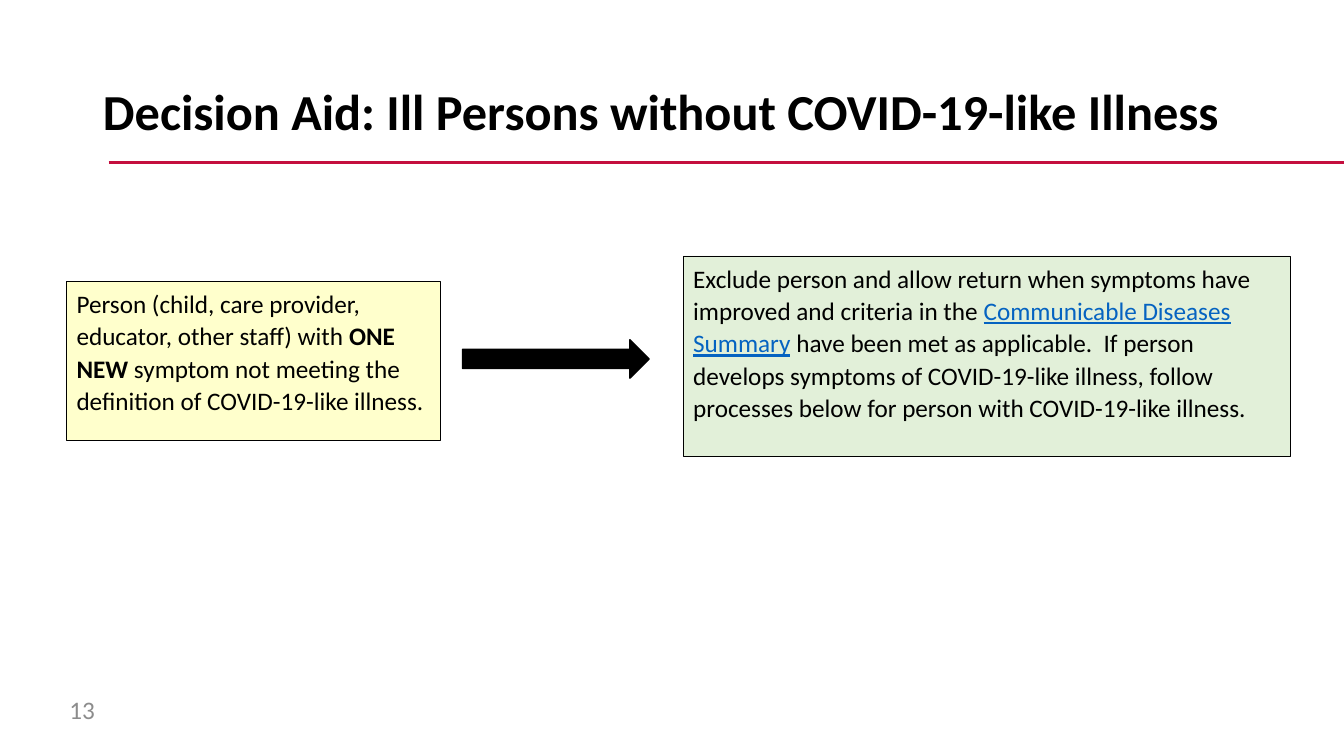
from pptx import Presentation
from pptx.dml.color import RGBColor
from pptx.enum.shapes import MSO_CONNECTOR, MSO_SHAPE
from pptx.enum.text import MSO_ANCHOR, MSO_AUTO_SIZE, PP_ALIGN
from pptx.oxml.ns import qn
from pptx.util import Cm, Pt
from lxml import etree

STRAIGHT = MSO_CONNECTOR.STRAIGHT
RECTANGLE, RIGHT_ARROW = MSO_SHAPE.RECTANGLE, MSO_SHAPE.RIGHT_ARROW
TOP, MIDDLE = MSO_ANCHOR.TOP, MSO_ANCHOR.MIDDLE
NO_AUTOFIT = MSO_AUTO_SIZE.NONE
LEFT = PP_ALIGN.LEFT
TITLE_ONLY = 5

FONT = "Calibri"
BLACK, GREY, LINK_BLUE = "000000", "8C8C8C", "0563C1"
RED, YELLOW, GREEN = "C40E3E", "FFFFCC", "E2F0D9"
BODY_SPACING = {"line_spacing": 1.07, "space_after": Pt(8)}


def rgb(hex_color):
    return RGBColor.from_string(hex_color)


def set_values(target, values):
    for name, value in values.items():
        setattr(target, name, value)


def place(shape, left, top, width, height):
    set_values(shape, {"left": Cm(left), "top": Cm(top),
                       "width": Cm(width), "height": Cm(height)})


def write(shape, spans, size, anchor, spacing):
    """Fill a shape with one paragraph of (text, color, font values) spans."""
    frame = shape.text_frame
    set_values(frame, {"word_wrap": True, "auto_size": NO_AUTOFIT,
                       "vertical_anchor": anchor})
    para = frame.paragraphs[0]
    set_values(para, {"alignment": LEFT, **spacing})
    for text, color, values in spans:
        span = para.add_run()
        span.text = text
        set_values(span.font, {"name": FONT, "size": Pt(size), **values})
        span.font.color.rgb = rgb(color)


def add_rule(page, left, right, top):
    rule = page.shapes.add_connector(STRAIGHT, Cm(left), Cm(top),
                                     Cm(right), Cm(top))
    rule.line.color.rgb = rgb(RED)
    rule.line.width = Pt(2.25)
    etree.SubElement(rule._element.spPr, qn("a:effectLst"))


def add_filled(page, kind, bounds, fill, line_width):
    shape = page.shapes.add_shape(kind, *map(Cm, bounds))
    shape.shadow.inherit = False
    shape.fill.solid()
    shape.fill.fore_color.rgb = rgb(fill)
    shape.line.color.rgb = rgb(BLACK)
    shape.line.width = Pt(line_width)
    return shape


def add_step(page, bounds, fill, spans):
    box = add_filled(page, RECTANGLE, bounds, fill, 0.5)
    write(box, spans, 18, TOP, BODY_SPACING)


def main():
    deck = Presentation()
    set_values(deck, {"slide_width": Cm(33.87), "slide_height": Cm(19.05)})
    page = deck.slides.add_slide(deck.slide_layouts[TITLE_ONLY])

    # Title and rule
    title = page.shapes.title
    place(title, 2.34, 1.02, 29.21, 3.73)
    write(title, [("Decision Aid: Ill Persons without COVID-19-like Illness",
                   BLACK, {"bold": True})], 36, MIDDLE, {"line_spacing": 0.9})
    add_rule(page, 2.74, 33.87, 4.09)

    # Decision flow
    add_step(page, (1.68, 7.09, 9.42, 4.01), YELLOW, [
        ("Person (child, care provider, educator, other staff) with ", BLACK, {}),
        ("ONE NEW ", BLACK, {"bold": True}),
        ("symptom not meeting the definition of COVID-19-like illness.",
         BLACK, {}),
    ])
    add_filled(page, RIGHT_ARROW, (11.66, 8.56, 4.7, 0.97), BLACK, 1)
    add_step(page, (17.22, 6.45, 15.29, 5.05), GREEN, [
        ("Exclude person and allow return when symptoms have improved "
         "and criteria in the ", BLACK, {}),
        ("Communicable Diseases Summary", LINK_BLUE, {"underline": True}),
        (" have been met as applicable.  If person develops symptoms of "
         "COVID-19-like illness, follow processes below for person with "
         "COVID-19-like illness.", BLACK, {}),
    ])

    # Page number
    number = page.shapes.add_textbox(Cm(1.5), Cm(17.37), Cm(1.5), Cm(1.02))
    write(number, [("13", GREY, {})], 18, MIDDLE, {})

    deck.save("out.pptx")


if __name__ == "__main__":
    main()
